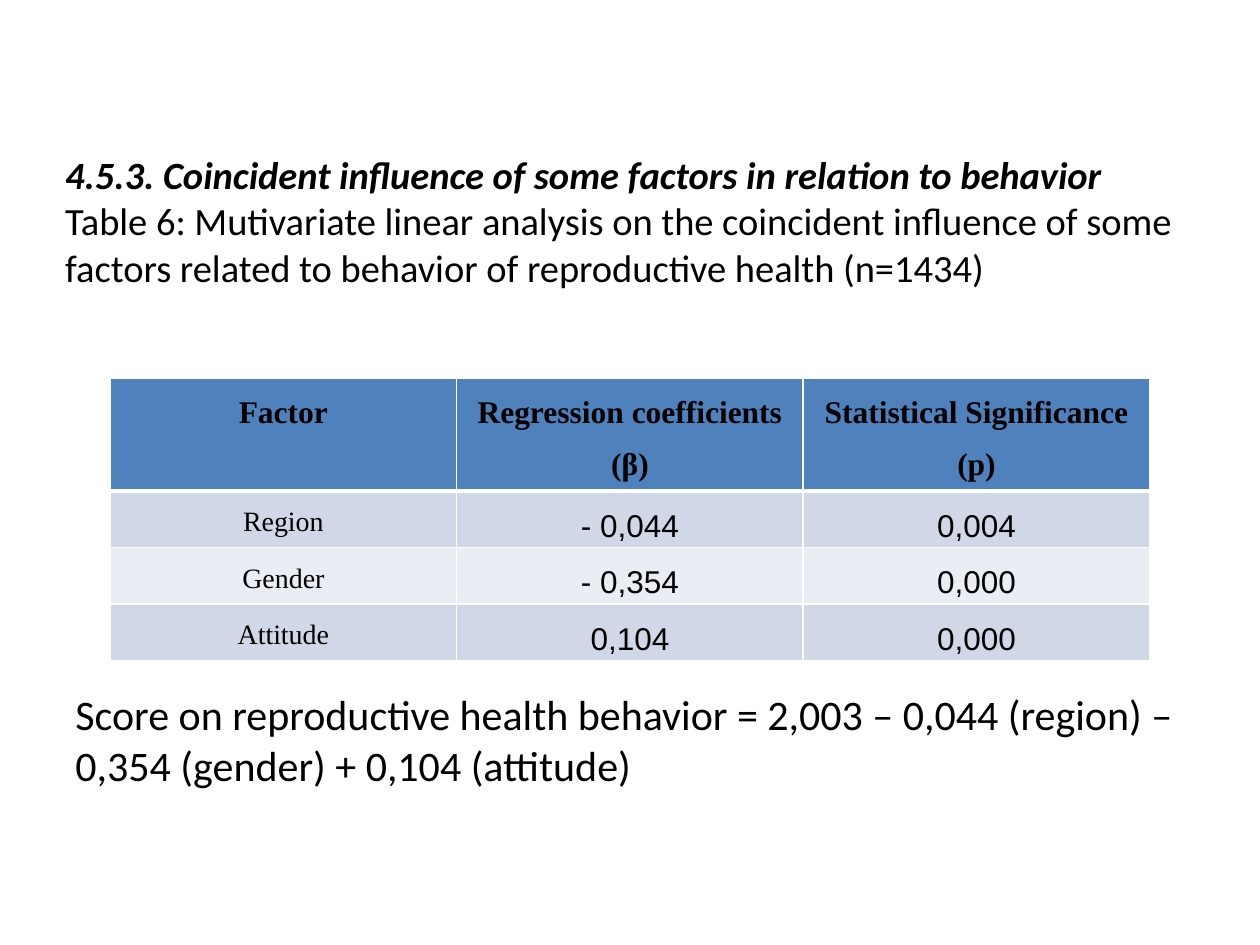
from lxml import etree
from pptx import Presentation
from pptx import util as u
from pptx.dml.color import RGBColor
from pptx.enum import text
from pptx.oxml import ns

BLACK = RGBColor(0x00, 0x00, 0x00)
WHITE = RGBColor(0xFF, 0xFF, 0xFF)
HEADER_BLUE = RGBColor(0x4F, 0x81, 0xBD)
BAND_DARK = RGBColor(0xD0, 0xD8, 0xE8)
BAND_LIGHT = RGBColor(0xE9, 0xED, 0xF4)

HEADING = "4.5.3. Coincident influence of some factors in relation to behavior"
CAPTION = ("Table 6: Mutivariate linear analysis on the coincident influence of some "
           "factors related to behavior of reproductive health (n=1434)")
EQUATION = ("Score on reproductive health behavior = 2,003 – 0,044 (region) – "
            "0,354 (gender) + 0,104 (attitude)")
ROWS = [
    ("Factor", "Regression coefficients (β)", "Statistical Significance (p)"),
    ("Region", "- 0,044", "0,004"),
    ("Gender", "- 0,354", "0,000"),
    ("Attitude", "0,104", "0,000"),
]


class SlideBuilder:
    body_font = "Calibri"
    label_font = "Times New Roman"
    value_font = "Arial"

    def __init__(self, slide):
        self.slide = slide

    def style(self, para, size, font, bold=False, italic=False):
        for span in para.runs:
            span.font.size = u.Pt(size)
            span.font.name = font
            span.font.bold = bold
            span.font.italic = italic
            span.font.color.rgb = BLACK

    def title(self, heading, caption, left, top, width, height):
        box = self.slide.shapes.title
        box.left, box.top, box.width, box.height = left, top, width, height
        frame = box.text_frame
        frame.text = f"{heading}\n{caption}"
        frame.word_wrap = True
        frame.auto_size = text.MSO_AUTO_SIZE.NONE
        frame.vertical_anchor = text.MSO_ANCHOR.TOP
        for para, emphasis in zip(frame.paragraphs, (True, False)):
            para.alignment = text.PP_ALIGN.LEFT
            self.style(para, 22, self.body_font, emphasis, emphasis)

    def text_box(self, content, left, top, width, height):
        frame = self.slide.shapes.add_textbox(left, top, width, height).text_frame
        frame.word_wrap = True
        frame.text = content
        self.style(frame.paragraphs[0], 24, self.body_font)

    def borders(self, cell, top, bottom):
        """Draw white cell borders; top and bottom are widths in points."""
        properties = cell._tc.get_or_add_tcPr()
        sides = (("lnL", 1), ("lnR", 1), ("lnT", top), ("lnB", bottom))
        for index, (side, width) in enumerate(sides):
            line = etree.Element(ns.qn(f"a:{side}"), w=str(u.Pt(width)))
            fill = etree.SubElement(line, ns.qn("a:solidFill"))
            etree.SubElement(fill, ns.qn("a:srgbClr"), val=str(WHITE))
            properties.insert(index, line)

    def cell(self, cell, content, row, column):
        is_header = row == 0
        cell.margin_left = cell.margin_right = u.Cm(0.18)
        cell.margin_top = cell.margin_bottom = 0
        cell.fill.solid()
        cell.fill.fore_color.rgb = (
            HEADER_BLUE if is_header else BAND_DARK if row % 2 else BAND_LIGHT)
        self.borders(cell, 3 if row == 1 else 1, 3 if is_header else 1)
        cell.text_frame.text = content
        para = cell.text_frame.paragraphs[0]
        para.alignment = text.PP_ALIGN.CENTER
        para.line_spacing = 1.5
        is_label = column == 0
        self.style(para, 16 if is_label and not is_header else 18,
                   self.label_font if is_header or is_label else self.value_font,
                   bold=is_header)

    def table(self, rows, left, top, width, header_height, row_height):
        height = header_height + row_height * (len(rows) - 1)
        table = self.slide.shapes.add_table(
            len(rows), len(rows[0]), left, top, width, height).table
        for row, values in enumerate(rows):
            table.rows[row].height = row_height if row else header_height
            for column, value in enumerate(values):
                self.cell(table.cell(row, column), value, row, column)


def main():
    deck = Presentation()
    deck.slide_width, deck.slide_height = u.Cm(25.4), u.Cm(19.05)
    page = SlideBuilder(deck.slides.add_slide(deck.slide_layouts[5]))
    page.title(HEADING, CAPTION, u.Cm(1.06), u.Cm(2.92), u.Cm(23.3), u.Cm(4))
    page.table(ROWS, u.Cm(2.22), u.Cm(7.62), u.Cm(20.96), u.Cm(2.28), u.Cm(1.14))
    page.text_box(EQUATION, u.Cm(1.27), u.Cm(13.76), u.Cm(23.07), u.Cm(3.33))
    deck.save("out.pptx")


if __name__ == "__main__":
    main()
